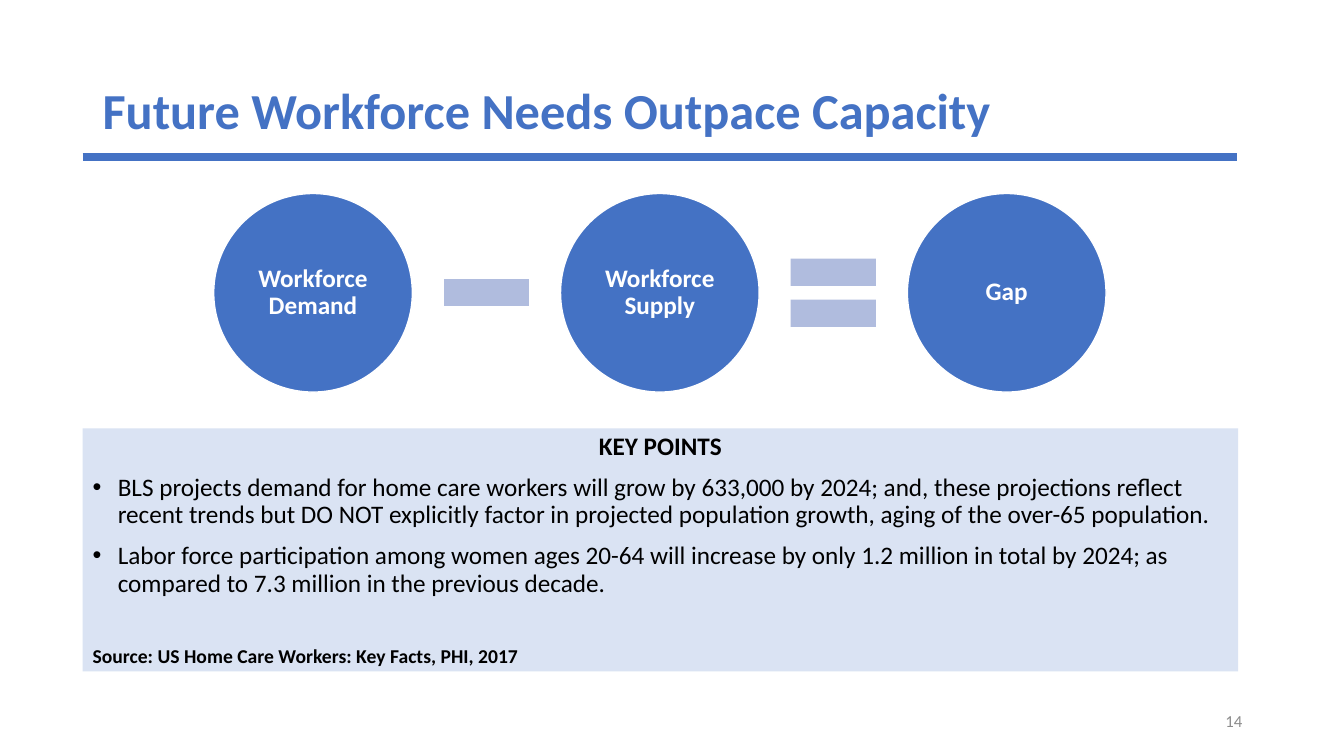
from dataclasses import dataclass

from lxml.etree import SubElement
from pptx import Presentation
from pptx.dml.color import RGBColor
from pptx.enum.shapes import MSO_CONNECTOR, MSO_SHAPE
from pptx.enum.text import MSO_ANCHOR, PP_ALIGN
from pptx.oxml.ns import qn
from pptx.util import Inches, Pt


@dataclass(frozen=True)
class Theme:
    font: str = "Calibri"
    blue: str = "4472C4"
    sign: str = "B0BCDE"
    panel: str = "DAE3F3"
    white: str = "FFFFFF"
    black: str = "000000"
    gray: str = "8C8C8C"
    title_size: int = 36
    body_size: int = 18
    source_size: int = 14
    number_size: int = 12


class SlideBuilder:
    def __init__(self, page, theme):
        self.page = page
        self.theme = theme

    def fill_paragraph(self, para, text, size, color, bold=False, align=PP_ALIGN.LEFT,
                       spacing=0.9, before=0, bullet=False):
        para.text = text
        para.alignment = align
        para.line_spacing = spacing
        para.space_before = Pt(before)
        if bullet:
            properties = para._p.get_or_add_pPr()
            properties.set("marL", str(Inches(0.25)))
            properties.set("indent", str(-Inches(0.25)))
            SubElement(properties, qn("a:buFont"), typeface="Arial")
            SubElement(properties, qn("a:buChar"), char="•")
        for span in para.runs:
            span.font.name = self.theme.font
            span.font.size = Pt(size)
            span.font.bold = bold
            span.font.color.rgb = RGBColor.from_string(color)

    def text(self, left, top, width, height, text, size, color, **style):
        box = self.page.shapes.add_textbox(
            Inches(left), Inches(top), Inches(width), Inches(height))
        frame = box.text_frame
        frame.word_wrap = True
        frame.vertical_anchor = MSO_ANCHOR.MIDDLE
        self.fill_paragraph(frame.paragraphs[0], text, size, color, **style)

    def shape(self, kind, left, top, width, height, fill, outline=None):
        shape = self.page.shapes.add_shape(
            kind, Inches(left), Inches(top), Inches(width), Inches(height))
        shape.shadow.inherit = False
        shape.fill.solid()
        shape.fill.fore_color.rgb = RGBColor.from_string(fill)
        if outline:
            shape.line.color.rgb = RGBColor.from_string(outline)
            shape.line.width = Pt(1)
        else:
            shape.line.fill.background()
        return shape

    def circle(self, left, top, size, label):
        circle = self.shape(MSO_SHAPE.OVAL, left, top, size, size,
                            self.theme.blue, self.theme.white)
        frame = circle.text_frame
        frame.word_wrap = True
        frame.vertical_anchor = MSO_ANCHOR.MIDDLE
        frame.margin_left = frame.margin_right = Inches(0.03)
        frame.margin_top = frame.margin_bottom = Inches(0.03)
        self.fill_paragraph(frame.paragraphs[0], label, self.theme.body_size,
                            self.theme.white, bold=True, align=PP_ALIGN.CENTER)

    def rule(self, left, right, top, width):
        line = self.page.shapes.add_connector(
            MSO_CONNECTOR.STRAIGHT, Inches(left), Inches(top), Inches(right), Inches(top))
        line.line.color.rgb = RGBColor.from_string(self.theme.blue)
        line.line.width = Pt(width)
        SubElement(line._element.spPr, qn("a:effectLst"))

    def panel(self, left, top, width, height, heading, points, source):
        theme = self.theme
        panel = self.shape(MSO_SHAPE.RECTANGLE, left, top, width, height, theme.panel)
        frame = panel.text_frame
        frame.word_wrap = True
        frame.vertical_anchor = MSO_ANCHOR.TOP
        self.fill_paragraph(frame.paragraphs[0], heading, theme.body_size, theme.black,
                            bold=True, align=PP_ALIGN.CENTER)
        for point in points:
            self.fill_paragraph(frame.add_paragraph(), point, theme.body_size,
                                theme.black, before=10, bullet=True)
        self.fill_paragraph(frame.add_paragraph(), source, theme.source_size,
                            theme.black, bold=True, before=35)


def main():
    deck = Presentation()
    deck.slide_width, deck.slide_height = Inches(13.33), Inches(7.5)
    theme = Theme()
    builder = SlideBuilder(deck.slides.add_slide(deck.slide_layouts[6]), theme)

    # Title and rule
    builder.text(0.92, 0.4, 11.5, 1.45, "Future Workforce Needs Outpace Capacity",
                 theme.title_size, theme.blue, bold=True)
    builder.rule(0.82, 12.27, 1.56, 6)

    # Equation: demand minus supply equals gap
    first_left, top, diameter, step = 2.12, 1.92, 1.97, 3.44
    sign_size = 1.15
    sign_offset = (diameter + step - sign_size) / 2
    for index, label in enumerate(["Workforce Demand", "Workforce Supply", "Gap"]):
        builder.circle(first_left + index * step, top, diameter, label)
    for index, sign in enumerate([MSO_SHAPE.MATH_MINUS, MSO_SHAPE.MATH_EQUAL]):
        builder.shape(sign, first_left + index * step + sign_offset,
                      top + (diameter - sign_size) / 2, sign_size, sign_size, theme.sign)

    # Key points
    builder.panel(
        0.82, 4.25, 11.46, 2.41, "KEY POINTS",
        ["BLS projects demand for home care workers will grow by 633,000 by 2024; and, "
         "these projections reflect recent trends but DO NOT explicitly factor in "
         "projected population growth, aging of the over-65 population.",
         "Labor force participation among women ages 20-64 will increase by only "
         "1.2 million in total by 2024; as compared to 7.3 million in the previous decade."],
        "Source: US Home Care Workers: Key Facts, PHI, 2017")

    # Page number
    builder.text(9.42, 6.95, 3, 0.4, "14", theme.number_size, theme.gray,
                 align=PP_ALIGN.RIGHT, spacing=1.0)

    deck.save("out.pptx")


if __name__ == "__main__":
    main()
